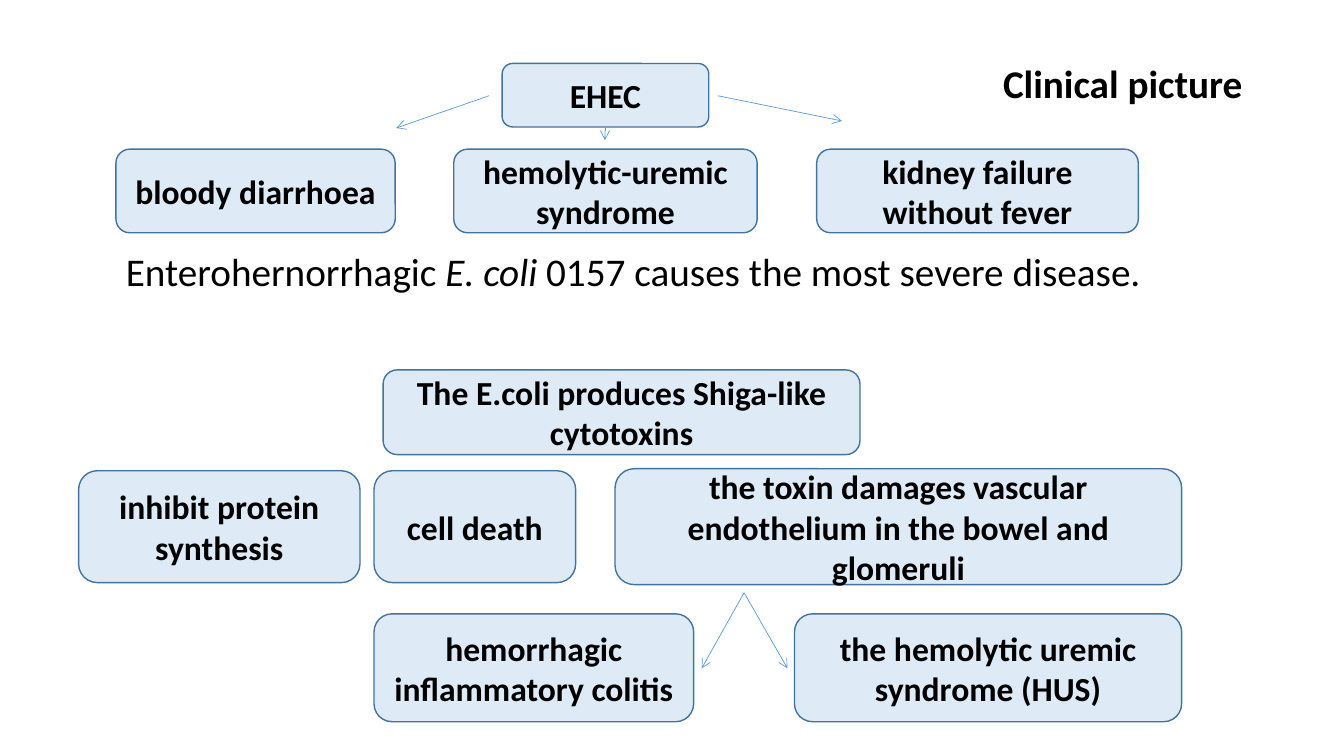
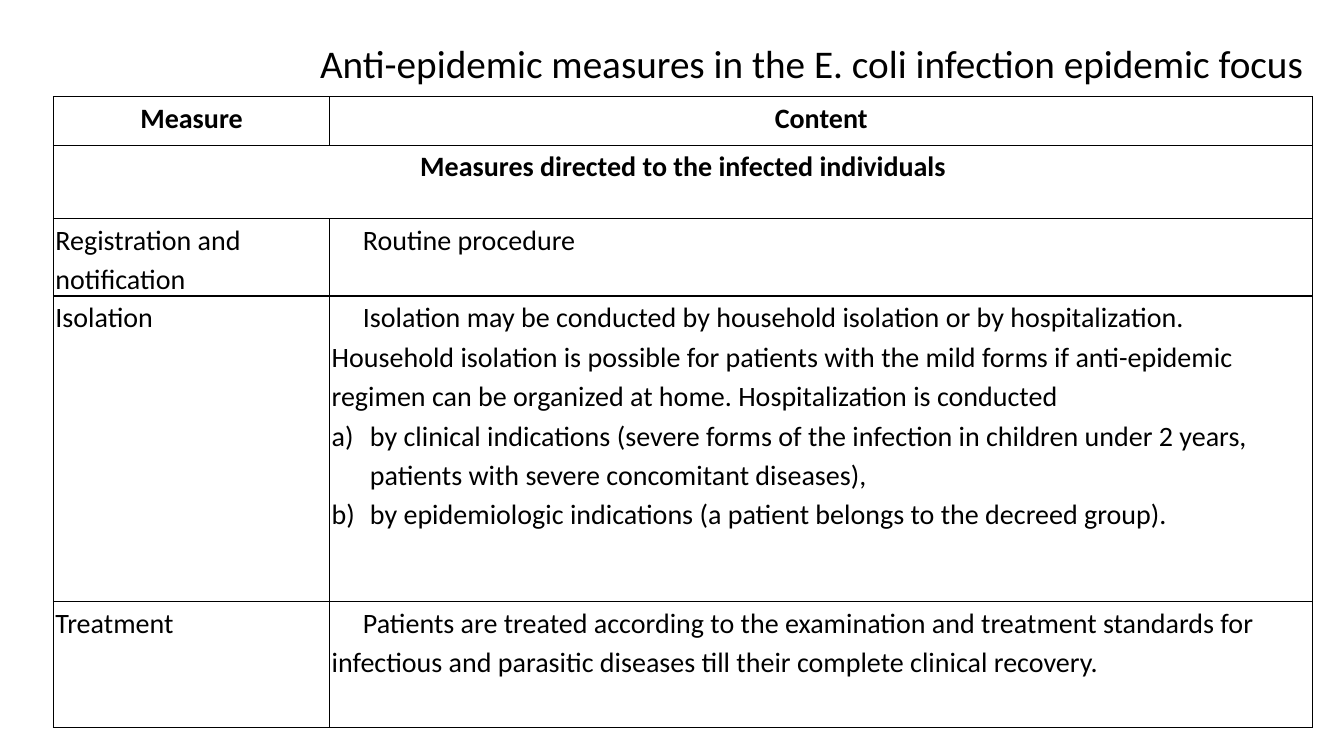
from lxml import etree
from pptx import Presentation
from pptx.dml.color import RGBColor
from pptx.enum.shapes import MSO_CONNECTOR, MSO_SHAPE
from pptx.enum.text import MSO_ANCHOR, PP_ALIGN
from pptx.oxml import parse_xml
from pptx.oxml.ns import nsdecls, qn
from pptx.util import Inches, Pt

BLACK = RGBColor(0x00, 0x00, 0x00)
PALE_BLUE = RGBColor(0xDE, 0xEB, 0xF7)
EDGE_BLUE = RGBColor(0x43, 0x73, 0x9E)
ARROW_BLUE = RGBColor(0x5B, 0x9B, 0xD5)
FONT = "Calibri"


def add_span(para, text, size, bold=False, italic=False):
    span = para.add_run()
    span.text = text
    font = span.font
    font.name, font.size, font.color.rgb = FONT, Pt(size), BLACK
    font.bold, font.italic = bold, italic


def add_line_of_text(page, place, spans, align=PP_ALIGN.LEFT, anchor=MSO_ANCHOR.TOP, bold=False):
    box = page.shapes.add_textbox(*[Inches(length) for length in place])
    frame = box.text_frame
    frame.word_wrap = True
    frame.vertical_anchor = anchor
    para = frame.paragraphs[0]
    para.alignment = align
    para.line_spacing = 0.9
    for text, italic in spans:
        add_span(para, text, 28, bold, italic)


deck = Presentation()
deck.slide_width, deck.slide_height = Inches(13.33), Inches(7.5)
blank = deck.slide_layouts[6]
clinical, measures = [deck.slides.add_slide(blank) for _ in range(2)]

# Titles
for page, text, place, bold in [
    (clinical, "Clinical picture", (0.92, 0.4, 11.5, 0.9), True),
    (measures, "Anti-epidemic measures in the E. coli infection epidemic focus",
     (1.52, -0.07, 11.5, 1.45), False),
]:
    add_line_of_text(page, place, [(text, False)], PP_ALIGN.RIGHT, MSO_ANCHOR.MIDDLE, bold)

# Slide 1: statement between the two diagrams
add_line_of_text(clinical, (1.15, 2.46, 11.48, 0.6), [
    ("Enterohernorrhagic ", False),
    ("E. coli", True),
    (" 0157 causes the most severe disease.", False),
])

# Slide 1: diagram boxes
for text, *place in [
    ("EHEC", 4.98, 0.63, 2.05, 0.63),
    ("bloody diarrhoea", 1.15, 1.48, 2.77, 0.83),
    ("hemolytic-uremic syndrome", 4.5, 1.48, 3.01, 0.83),
    ("kidney failure without fever", 8.1, 1.48, 3.19, 0.83),
    ("The E.coli produces Shiga-like cytotoxins", 3.8, 3.67, 4.73, 0.84),
    ("inhibit protein synthesis", 0.78, 4.67, 2.79, 1.11),
    ("cell death", 3.71, 4.67, 2, 1.11),
    ("the toxin damages vascular endothelium in the bowel and glomeruli",
     6.1, 4.65, 5.62, 1.15),
    ("hemorrhagic inflammatory colitis", 3.71, 6.09, 3.17, 1.07),
    ("the hemolytic uremic syndrome (HUS)", 7.88, 6.09, 3.84, 1.07),
]:
    box = clinical.shapes.add_shape(
        MSO_SHAPE.FLOWCHART_ALTERNATE_PROCESS, *[Inches(length) for length in place])
    box.shadow.inherit = False
    box.fill.solid()
    box.fill.fore_color.rgb = PALE_BLUE
    box.line.color.rgb = EDGE_BLUE
    box.line.width = Pt(1)
    box.text_frame.word_wrap = True
    box.text_frame.vertical_anchor = MSO_ANCHOR.MIDDLE
    para = box.text_frame.paragraphs[0]
    para.alignment = PP_ALIGN.CENTER
    add_span(para, text, 24, bold=True)

# Slide 1: arrows
for ends in [
    (4.85, 0.95, 3.93, 1.27),
    (7.12, 0.95, 8.35, 1.2),
    (6, 1.27, 6, 1.39),
    (7.38, 5.88, 6.96, 6.63),
    (7.38, 5.88, 7.81, 6.63),
]:
    arrow = clinical.shapes.add_connector(
        MSO_CONNECTOR.STRAIGHT, *[Inches(length) for length in ends])
    arrow.line.color.rgb = ARROW_BLUE
    arrow.line.width = Pt(0.5)
    properties = arrow.element.spPr
    etree.SubElement(properties.find(qn("a:ln")), qn("a:tailEnd"), type="arrow")
    etree.SubElement(properties, qn("a:effectLst"))

# Slide 2: table; each cell is a list of (style, text) paragraphs
rows = [
    (0.48, [("head", "Measure")], [("head", "Content")]),
    (0.73, [("head", "Measures directed to the infected individuals")], []),
    (0.72, [("plain", "Registration and notification")], [("indent", "Routine procedure")]),
    (3.03, [("plain", "Isolation")], [
        ("indent", "Isolation may be conducted by household isolation or by "
         "hospitalization. Household isolation is possible for patients with the mild "
         "forms if anti-epidemic regimen can be organized at home. Hospitalization is "
         "conducted"),
        ("letter", "by clinical indications (severe forms of the infection in children "
         "under 2 years, patients with severe concomitant diseases),"),
        ("letter", "by epidemiologic indications (a patient belongs to the decreed group)."),
    ]),
    (1.25, [("plain", "Treatment")], [
        ("indent", "Patients are treated according to the examination and treatment "
         "standards for infectious and parasitic diseases till their complete clinical "
         "recovery."),
    ]),
]
margins = {"head": (0, 0), "plain": (0, 0), "indent": (0, 0.31), "letter": (0.38, -0.38)}

table = measures.shapes.add_table(
    len(rows), 2, Inches(0.53), Inches(0.96), Inches(12.49), Inches(6.21)).table
table.first_row = table.horz_banding = False
for column, width in zip(table.columns, (2.74, 9.75)):
    column.width = Inches(width)
table.cell(1, 0).merge(table.cell(1, 1))

for row, (height, *contents) in zip(table.rows, rows):
    row.height = Inches(height)
    for cell, content in zip(row.cells, contents):
        cell.margin_left = cell.margin_right = Inches(0.02)
        cell.margin_top = cell.margin_bottom = 0
        cell.fill.background()
        cell_properties = cell._tc.get_or_add_tcPr()
        for position, side in enumerate("LRTB"):
            cell_properties.insert(position, parse_xml(
                f'<a:ln{side} {nsdecls("a")} w="{Pt(1)}"><a:solidFill>'
                f'<a:srgbClr val="{BLACK}"/></a:solidFill></a:ln{side}>'))
        for number, (style, text) in enumerate(content):
            frame = cell.text_frame
            para = frame.add_paragraph() if number else frame.paragraphs[0]
            para.alignment = PP_ALIGN.CENTER if style == "head" else PP_ALIGN.LEFT
            para.line_spacing = 1.15
            left, first = margins[style]
            para_properties = para._p.get_or_add_pPr()
            para_properties.set("marL", str(Inches(left)))
            para_properties.set("indent", str(Inches(first)))
            if style == "letter":
                etree.SubElement(para_properties, qn("a:buFont"), typeface="+mj-lt")
                etree.SubElement(para_properties, qn("a:buAutoNum"), type="alphaLcParenR")
            add_span(para, text, 20, bold=style == "head")

deck.save("out.pptx")
